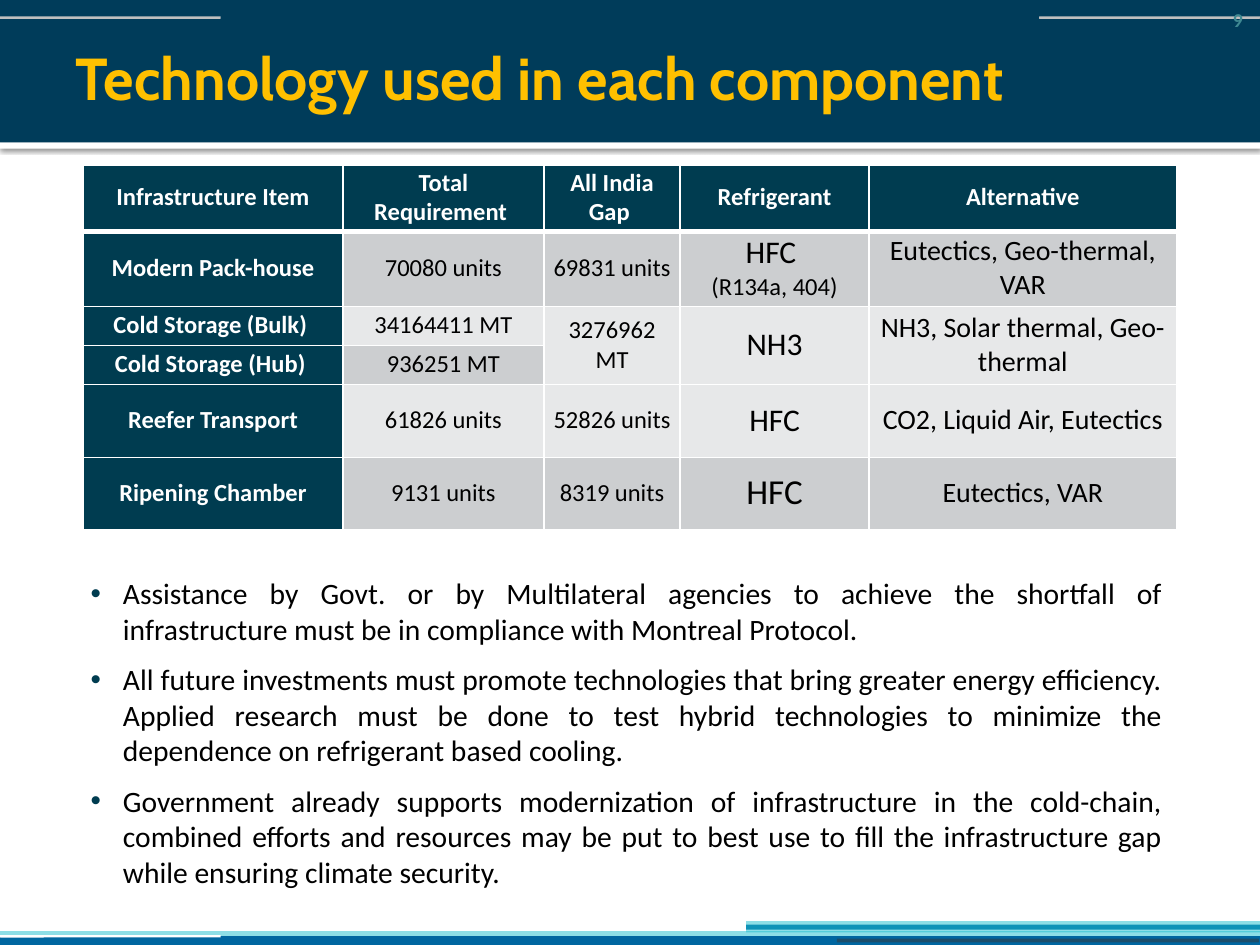
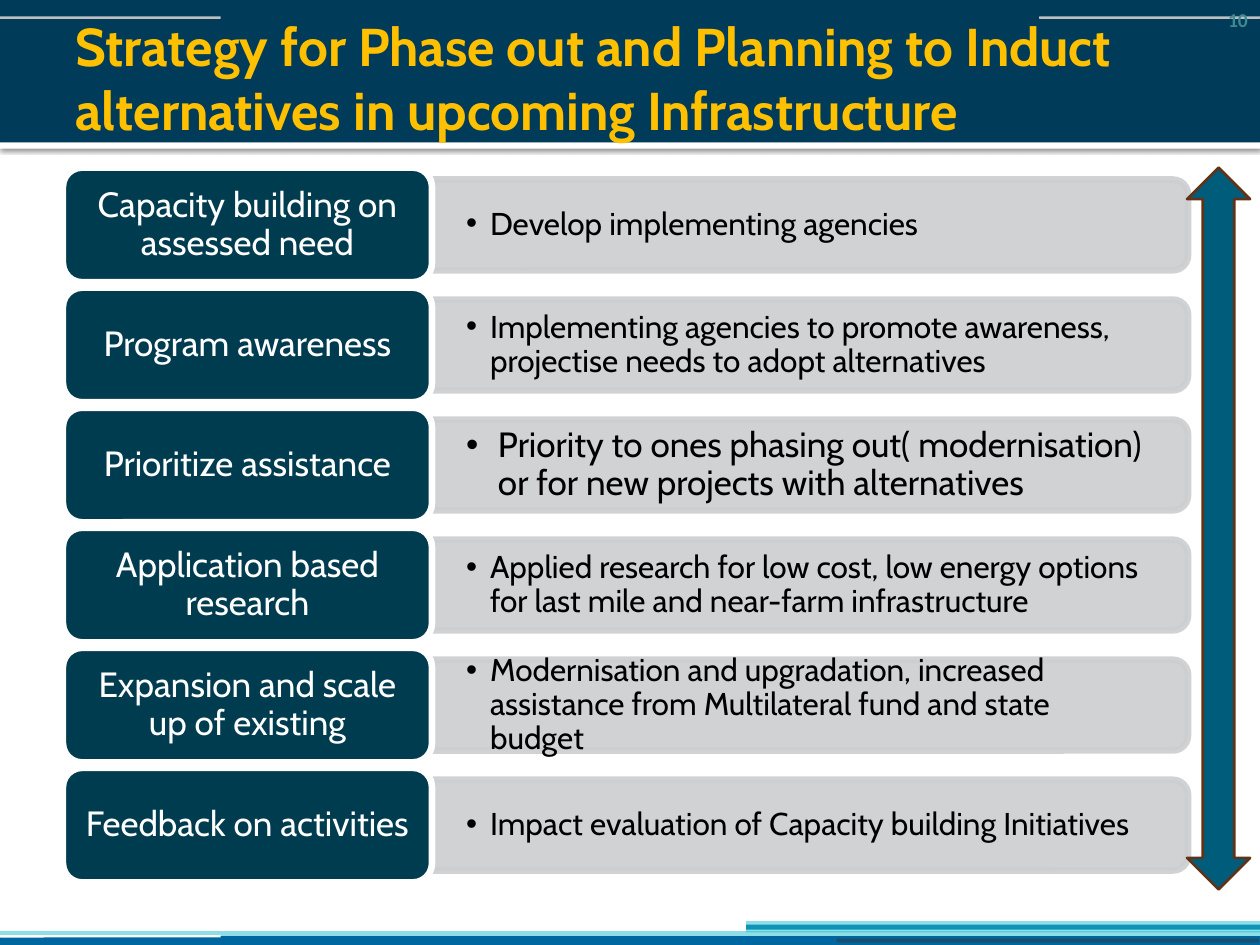
from lxml.etree import SubElement
from pptx import Presentation
from pptx.dml.color import RGBColor
from pptx.enum.shapes import MSO_SHAPE as SHAPE
from pptx.enum.text import MSO_ANCHOR as ANCHOR, MSO_AUTO_SIZE as AUTO, PP_ALIGN as ALIGN
from pptx.oxml.ns import qn
from pptx.util import Cm, Pt

NAVY, TEAL, AQUA, BLUE = "003C5A", "003C50", "1DBECF", "0066A0"
GOLD, WHITE, BLACK = "FFC000", "FFFFFF", "000000"
GREY, PALE, RULE = "CCCED0", "E7E8E9", "BFBFBF"
ROUND = SHAPE.ROUNDED_RECTANGLE
BODY, HEAD = "Calibri", "Cabin"

BANDS = [
    (SHAPE.RECTANGLE, (0, 0, 25.4, 2.87), NAVY, 100),
    (SHAPE.RECTANGLE, (0, 18.87, 25.4, 0.18), BLUE, 100),
    (SHAPE.RECTANGLE, (15.04, 18.64, 10.36, 0.1), BLUE, 100),
    (ROUND, (16.87, 18.92, 8.51, 0.08), "383838", 50),
    (SHAPE.RECTANGLE, (15.04, 18.57, 10.36, 0.23), AQUA, 50),
    (ROUND, (0, 0.33, 4.45, 0.05), RULE, 100),
    (SHAPE.RECTANGLE, (0, 18.77, 25.4, 0.1), AQUA, 50),
    (ROUND, (0, 18.85, 4.45, 0.05), WHITE, 100),
    (ROUND, (20.95, 0.33, 4.45, 0.05), RULE, 100),
]

COLUMNS = [5.23, 4.06, 2.74, 3.81, 6.2]
ROWS = [1.32, 1.47, 0.79, 0.79, 1.47, 1.45]
HEADINGS = ["Infrastructure Item", "Total Requirement ", "All India Gap ",
            "Refrigerant", "Alternative"]
ITEMS = [
    ["Modern Pack-house", "70080 units", "69831 units",
     [("HFC ", 18), ("(R134a, 404)", 14)], "Eutectics, Geo-thermal, VAR"],
    ["Cold Storage (Bulk) ", "34164411 MT", "3276962 MT",
     [("NH3", 18)], "NH3, Solar thermal, Geo-thermal"],
    ["Cold Storage (Hub) ", "936251 MT"],
    ["Reefer Transport", "61826 units", "52826 units",
     [("HFC", 18)], "CO2, Liquid Air, Eutectics"],
    ["Ripening Chamber", "9131 units", "8319 units",
     [("HFC", 20)], "Eutectics, VAR"],
]
REMARKS = [
    "Assistance by Govt. or by Multilateral agencies to achieve the shortfall of "
    "infrastructure must be in compliance with Montreal Protocol. ",
    "All future investments must promote technologies that bring greater energy "
    "efficiency. Applied research must be done to test hybrid technologies to "
    "minimize the dependence on refrigerant based cooling.",
    "Government already supports modernization of infrastructure in the cold-chain, "
    "combined efforts and resources may be put to best use to fill the "
    "infrastructure gap while ensuring climate security. ",
]
STEPS = [
    ("Capacity building on assessed need", "Develop implementing agencies", 18),
    ("Program awareness", "Implementing agencies to promote awareness, "
     "projectise needs to adopt alternatives", 18),
    ("Prioritize assistance", "Priority to ones phasing out( modernisation) "
     "or for new projects with alternatives", 20),
    ("Application based research", "Applied research for low cost, low energy "
     "options for last mile and near-farm infrastructure", 18),
    ("Expansion and scale up of existing", "Modernisation and upgradation, increased "
     "assistance from Multilateral fund and state budget", 18),
    ("Feedback on activities", "Impact evaluation of Capacity building Initiatives", 18),
]


def rgb(code):
    return RGBColor.from_string(code)


def cms(box):
    return [Cm(v) for v in box]


def add_bullet(p, indent, color):
    pPr = p._p.get_or_add_pPr()
    pPr.set("marL", str(Cm(indent)))
    pPr.set("indent", str(-Cm(indent)))
    SubElement(SubElement(pPr, qn("a:buClr")), qn("a:srgbClr"), val=color)
    SubElement(pPr, qn("a:buFont"), typeface="Arial")
    SubElement(pPr, qn("a:buChar"), char="•")


def write(tf, *texts, size=14, color=BLACK, bold=False, font=BODY, align=ALIGN.LEFT,
          before=0, spacing=None, indent=0, bullet=BLACK):
    for i, text in enumerate(texts):
        p = tf.add_paragraph() if i else tf.paragraphs[0]
        p.alignment = align
        p.space_before = Pt(before if i else 0)
        if spacing:
            p.line_spacing = spacing
        if indent:
            add_bullet(p, indent, bullet)
        lines = [(text, size)] if isinstance(text, str) else text
        for j, (line, points) in enumerate(lines):
            if j:
                p.add_line_break()
            r = p.add_run()
            r.text = line
            r.font.size, r.font.bold, r.font.name = Pt(points), bold, font
            r.font.color.rgb = rgb(color)


def set_frame(tf, margins=(0, 0, 0, 0), anchor=ANCHOR.MIDDLE, wrap=True):
    tf.word_wrap, tf.auto_size, tf.vertical_anchor = wrap, AUTO.NONE, anchor
    tf.margin_left, tf.margin_top, tf.margin_right, tf.margin_bottom = cms(margins)
    return tf


def add_text(s, box, *texts, margins=(0, 0, 0, 0), anchor=ANCHOR.MIDDLE, wrap=True, **fmt):
    sp = s.shapes.add_textbox(*cms(box))
    write(set_frame(sp.text_frame, margins, anchor, wrap), *texts, **fmt)


def add_shape(s, kind, box, fill, line=None, width=3.78, opacity=100):
    sp = s.shapes.add_shape(kind, *cms(box))
    sp.shadow.inherit = False
    sp.fill.solid()
    sp.fill.fore_color.rgb = rgb(fill)
    if line:
        sp.line.color.rgb = rgb(line)
        sp.line.width = Pt(width)
    else:
        sp.line.fill.background()
    if opacity < 100:
        for c in list(sp._element.spPr.iter(qn("a:srgbClr"))):
            SubElement(c, qn("a:alpha"), val=str(opacity * 1000))
    return sp


def move_bands_to_layout(s):
    layout = s.slide_layout
    for ph in list(layout.placeholders):
        if ph.placeholder_format.idx:
            layout.shapes.element.remove(ph._element)
    strip = add_shape(s, SHAPE.RECTANGLE, (0, 2.87, 25.4, 0.13), WHITE)
    effects = strip._element.spPr.find(qn("a:effectLst"))
    shadow = SubElement(effects, qn("a:outerShdw"), blurRad=str(Pt(2.5)),
                        dist=str(Pt(0.8)), dir="5400000", algn="t", rotWithShape="0")
    SubElement(SubElement(shadow, qn("a:srgbClr"), val=BLACK), qn("a:alpha"), val="60000")
    bands = [add_shape(s, kind, box, fill, opacity=a) for kind, box, fill, a in BANDS]
    for sp in [strip] + bands:
        layout.shapes.element.append(sp._element)


def add_slide(prs, title, number, size):
    s = prs.slides.add_slide(prs.slide_layouts[5])
    if len(prs.slides) == 1:
        move_bands_to_layout(s)
    sp = s.shapes.title
    sp.left, sp.top, sp.width, sp.height = cms((1.27, 0.43, 22.86, 2.24))
    tf = set_frame(sp.text_frame, (0.25, 0.13, 0.13, 0.13))
    write(tf, title, size=size, color=GOLD, bold=True, font=HEAD)
    add_text(s, (24.51, 0, 0.89, 0.8), number, size=11.2, color="3F8992", bold=True,
             align=ALIGN.CENTER, wrap=False)
    return s


def set_borders(cell, bottom):
    tcPr = cell._tc.get_or_add_tcPr()
    for i, (side, points) in enumerate(zip("LRTB", (1, 1, 1, bottom))):
        ln = SubElement(tcPr, qn(f"a:ln{side}"), w=str(Pt(points)))
        SubElement(SubElement(ln, qn("a:solidFill")), qn("a:srgbClr"), val=WHITE)
        tcPr.insert(i, ln)


def add_infrastructure_table(s, box):
    tbl = s.shapes.add_table(len(ROWS), len(COLUMNS), *cms(box)).table
    for col, width in zip(tbl.columns, COLUMNS):
        col.width = Cm(width)
    for row, height in zip(tbl.rows, ROWS):
        row.height = Cm(height)
    for c in (2, 3, 4):
        tbl.cell(2, c).merge(tbl.cell(3, c))
    for i, texts in enumerate([HEADINGS] + ITEMS):
        for j in range(len(COLUMNS)):
            cell = tbl.cell(i, j)
            label = i == 0 or j == 0
            cell.fill.solid()
            cell.fill.fore_color.rgb = rgb(TEAL if label else GREY if i % 2 else PALE)
            set_borders(cell, 1 if i else 3)
            cell.vertical_anchor = ANCHOR.MIDDLE
            cell.margin_left = cell.margin_right = Cm(0.15)
            cell.margin_top, cell.margin_bottom = Cm(0.05), Cm(0.08)
            if j < len(texts):
                write(cell.text_frame, texts[j], size=16 if i and j == 4 else 14,
                      color=WHITE if label else BLACK, bold=label, align=ALIGN.CENTER)


def add_step(s, box, label, detail, size):
    left, top, width, height = box
    label_width, bar_height, text_height = 7.44, 1.83, 1.65
    middle, bar_left = top + height / 2, left + label_width
    bar_width = width - label_width
    bar = add_shape(s, SHAPE.ROUND_2_SAME_RECTANGLE,
                    (bar_left + (bar_width - bar_height) / 2, middle - bar_width / 2,
                     bar_height, bar_width), GREY, line=GREY, opacity=90)
    bar.rotation = 90
    add_text(s, (bar_left, middle - text_height / 2, bar_width - 0.1, text_height), detail,
             margins=(0.69, 0.36, 0.69, 0.36), size=size, font=HEAD, spacing=0.9,
             indent=0.64 if size == 20 else 0.48)
    sp = add_shape(s, ROUND, (left, top, label_width, height), TEAL, line=WHITE)
    write(set_frame(sp.text_frame, (0.2, 0.1, 0.2, 0.1)), label, size=20, color=WHITE,
          font=HEAD, align=ALIGN.CENTER, spacing=0.9)


def add_steps(s, box, pitch=2.42):
    left, top, width, height = box
    step_height = height - pitch * (len(STEPS) - 1)
    for i, step in enumerate(STEPS):
        add_step(s, (left, top + i * pitch, width, step_height), *step)


def build_technology(prs):
    s = add_slide(prs, "Technology used in each component", "9", 33.8)
    add_infrastructure_table(s, (1.68, 3.33, 22.04, 7.29))
    add_text(s, (1.68, 11.35, 22.02, 6), *REMARKS, margins=(0.15, 0.25, 0.25, 0.13),
             anchor=ANCHOR.TOP, size=16.9, align=ALIGN.JUSTIFY, before=8.6,
             indent=0.65, bullet=TEAL)


def build_strategy(prs):
    s = add_slide(prs, "Strategy for Phase out and Planning to Induct alternatives "
                  "in upcoming Infrastructure", "10", 30.4)
    add_steps(s, (1.27, 3.38, 22.68, 14.41))
    add_shape(s, SHAPE.UP_DOWN_ARROW, (23.93, 3.38, 1.27, 14.55), "005C7B",
              line="623217", width=1.5)


def main():
    prs = Presentation()
    prs.slide_width, prs.slide_height = Cm(25.4), Cm(19.05)
    build_technology(prs)
    build_strategy(prs)
    prs.save("out.pptx")


if __name__ == "__main__":
    main()
